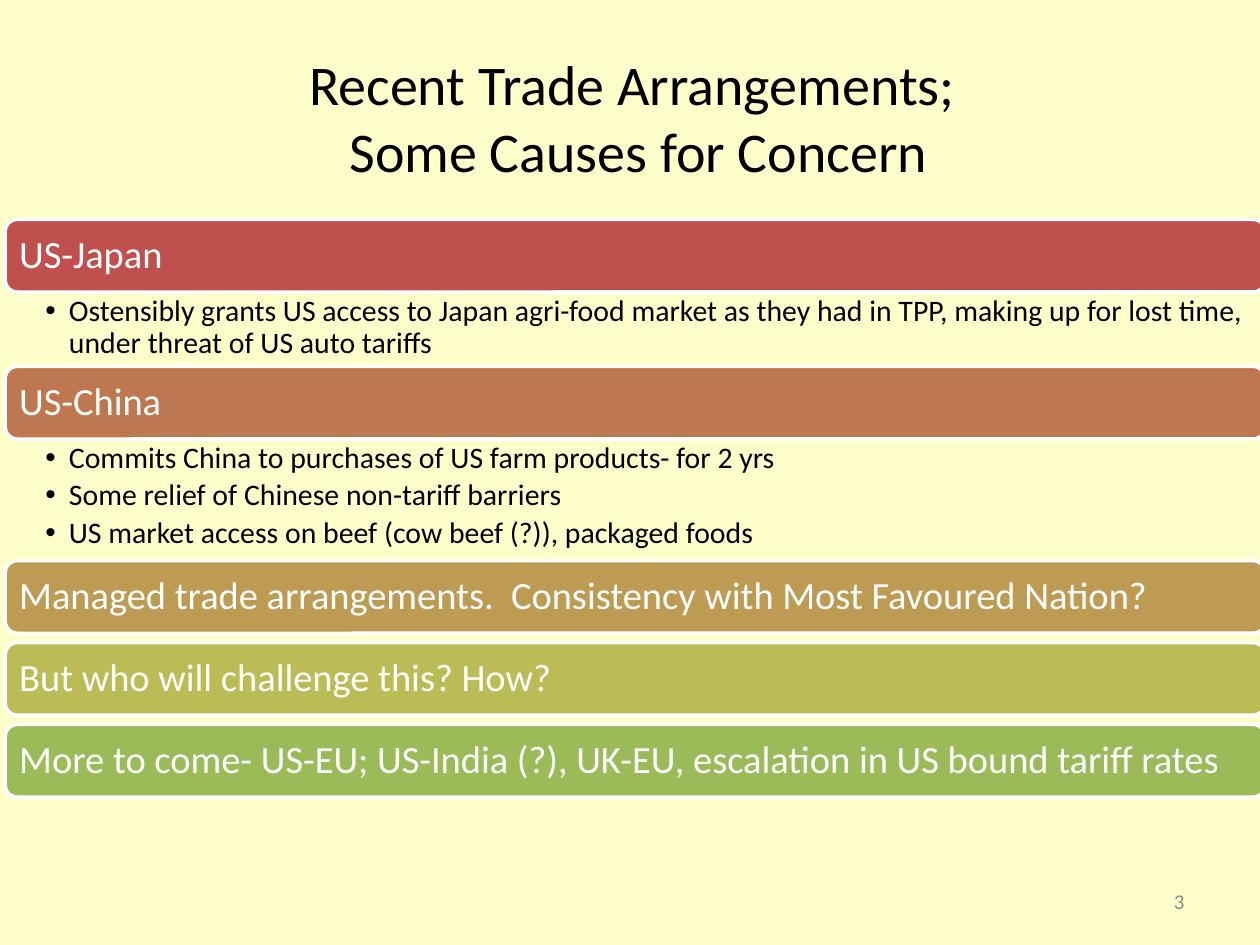
from lxml import etree
from pptx import Presentation
from pptx.dml.color import RGBColor
from pptx.enum import shapes, text
from pptx.oxml.ns import qn
from pptx.util import Pt


def color(hex_string):
    return RGBColor.from_string(hex_string)


def write(shape, lines, size, ink="000000", align=text.PP_ALIGN.LEFT,
          anchor=text.MSO_ANCHOR.MIDDLE, margins=(7.2, 3.6, 7.2, 3.6),
          line_spacing=1.0, space_after=0, bullet_indent=0):
    """Fill a shape with one paragraph per line; margins run left, top, right, bottom."""
    frame = shape.text_frame
    frame.word_wrap = True
    frame.vertical_anchor = anchor
    (frame.margin_left, frame.margin_top,
     frame.margin_right, frame.margin_bottom) = map(Pt, margins)
    for index, line in enumerate(lines):
        paragraph = frame.add_paragraph() if index else frame.paragraphs[0]
        paragraph.text = line
        paragraph.alignment = align
        paragraph.line_spacing = line_spacing
        paragraph.space_after = Pt(space_after)
        for run in paragraph.runs:
            run.font.name = "Calibri"
            run.font.size = Pt(size)
            run.font.color.rgb = color(ink)
        if bullet_indent:
            properties = paragraph._p.get_or_add_pPr()
            properties.set("marL", str(Pt(bullet_indent)))
            properties.set("indent", str(-Pt(bullet_indent)))
            etree.SubElement(properties, qn("a:buFont"), typeface="Arial")
            etree.SubElement(properties, qn("a:buChar"), char="•")


presentation = Presentation()
presentation.slide_width, presentation.slide_height = Pt(720), Pt(540)
slide = presentation.slides.add_slide(presentation.slide_layouts[6])
slide.background.fill.solid()
slide.background.fill.fore_color.rgb = color("FFFFCC")

title = slide.shapes.add_textbox(Pt(12), Pt(21.6), Pt(706), Pt(90))
write(title, ["Recent Trade Arrangements; \vSome Causes for Concern"], 32,
      align=text.PP_ALIGN.CENTER)

# Heading, bar colour, bullets, height of the space below the bar
sections = [
    ("US-Japan", "C0504D",
     ["Ostensibly grants US access to Japan agri-food market as they had in TPP, "
      "making up for lost time, under threat of US auto tariffs"], 42.5),
    ("US-China", "BF7750",
     ["Commits China to purchases of US farm products- for 2 yrs",
      "Some relief of Chinese non-tariff barriers",
      "US market access on beef (cow beef (?)), packaged foods"], 69.5),
    ("Managed trade arrangements.  Consistency with Most Favoured Nation?",
     "BD9B53", [], 5.3),
    ("But who will challenge this? How?", "BCBC56", [], 5.3),
    ("More to come- US-EU; US-India (?), UK-EU, escalation in US bound tariff rates",
     "9BBB59", [], 5.3),
]
left, width, bar_height = Pt(3), Pt(720), 41.5
top = 125.4
for heading, fill, bullets, space_below in sections:
    bar = slide.shapes.add_shape(shapes.MSO_SHAPE.ROUNDED_RECTANGLE,
                                 left, Pt(top), width, Pt(bar_height))
    bar.shadow.inherit = False
    bar.fill.solid()
    bar.fill.fore_color.rgb = color(fill)
    bar.line.color.rgb = color("FFFFFF")
    bar.line.width = Pt(2)
    write(bar, [heading], 22, ink="FFFFFF", margins=(6, 4.5, 6, 4.5), line_spacing=0.9)
    top += bar_height
    if bullets:
        details = slide.shapes.add_textbox(left, Pt(top), width, Pt(space_below))
        write(details, bullets, 17, anchor=text.MSO_ANCHOR.TOP,
              margins=(22.9, 2.2, 12.2, 2.2), line_spacing=0.9, space_after=3,
              bullet_indent=13.5)
    top += space_below

slide_number = slide.shapes.add_textbox(Pt(516), Pt(500.5), Pt(168), Pt(28.8))
write(slide_number, ["3"], 12, ink="8C8C8C", align=text.PP_ALIGN.RIGHT)

presentation.save("out.pptx")
